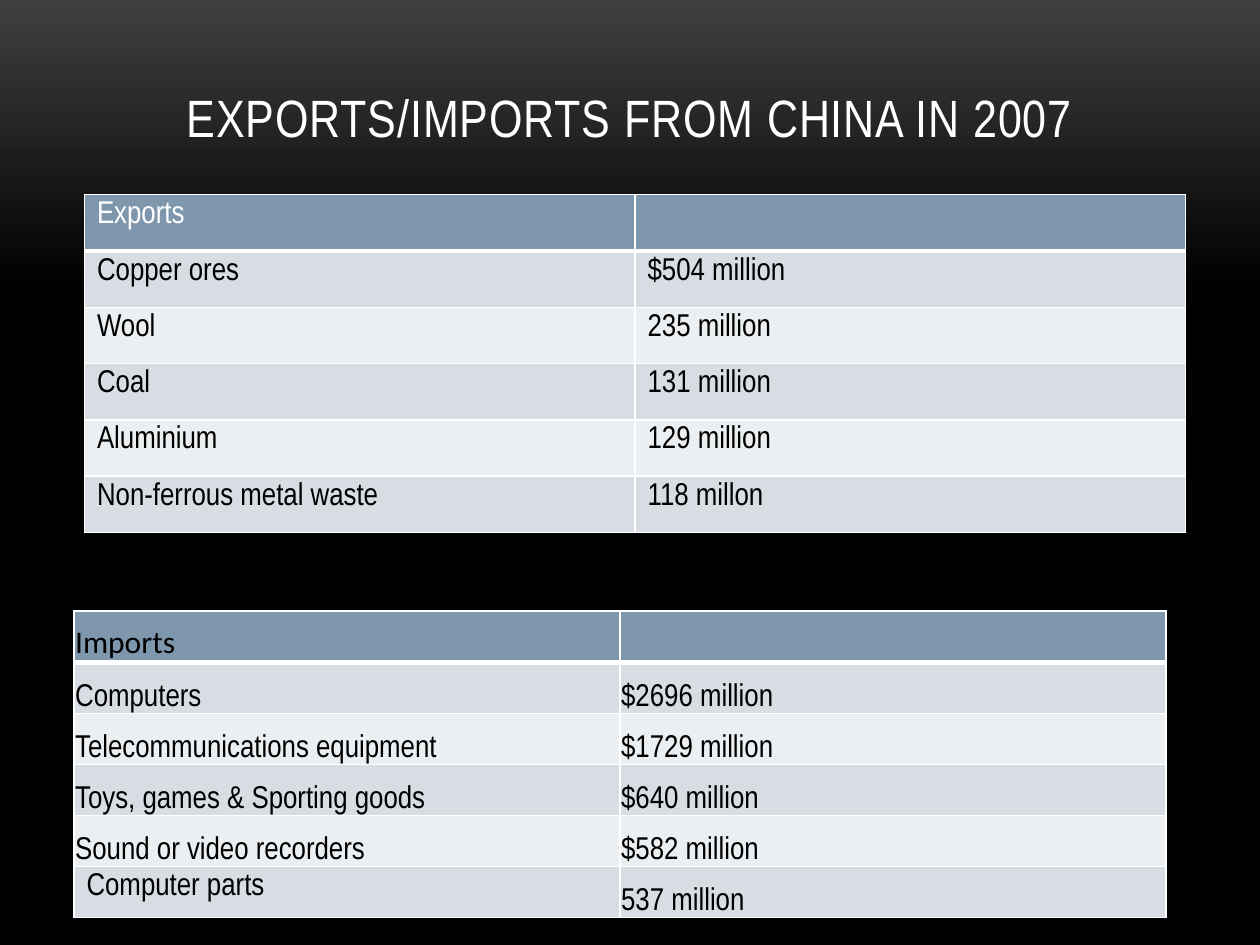
"""Build a slide with two tables of trade with China in 2007."""
from dataclasses import dataclass

from lxml.etree import SubElement as Sub
from pptx import Presentation
from pptx.dml.color import RGBColor as Rgb
from pptx.enum.text import MSO_ANCHOR as Anchor, PP_ALIGN as Align
from pptx.oxml.ns import qn
from pptx.slide import Slide
from pptx.table import _Cell as Cell
from pptx.text.text import TextFrame as Frame
from pptx.util import Pt


@dataclass(frozen=True)
class Theme:
    """Colours, fonts and type sizes."""
    glow: str = "3F3F3F"
    dark: str = "000000"
    light: str = "FFFFFF"
    head: str = "7E97AD"
    bands: tuple[str, str] = ("D8DDE3", "ECEFF1")
    face: str = "Arial Narrow"
    alt: str = "Calibri"
    title: float = 30
    body: float = 18
    thin: float = 1
    thick: float = 3


@dataclass(frozen=True)
class Trade:
    """One table of goods and values."""
    left: float
    top: float
    width: float
    row: float
    name: str
    face: str
    ink: str
    goods: tuple[tuple[str, str], ...]
    tight: bool = False


THEME = Theme()
TRADES = (
    Trade(42.24, 349.2, 624, 29.2, "Imports", THEME.alt, THEME.dark, (
        ("Computers", "$2696 million"),
        ("Telecommunications equipment", "$1729 million"),
        ("Toys, games & Sporting goods", "$640 million"),
        ("Sound or video recorders", "$582 million"),
        ("Computer parts", "537 million"),
    ), True),
    Trade(48.24, 111.3, 629.2, 32.16, "Exports", THEME.face, THEME.light, (
        ("Copper ores", "$504 million"),
        ("Wool", "235 million"),
        ("Coal", "131 million"),
        ("Aluminium", "129 million"),
        ("Non-ferrous metal waste", "118 millon"),
    )),
)


def write(frame: Frame, text: str, face: str, size: float, ink: str) -> None:
    """Set the text of a frame and format its runs."""
    frame.text = text
    for run in frame.paragraphs[0].runs:
        font = run.font
        font.name, font.size, font.bold = face, Pt(size), False
        font.color.rgb = Rgb.from_string(ink)


def edge(cell: Cell, base: float) -> None:
    """Draw the four borders of a cell."""
    props = cell._tc.get_or_add_tcPr()
    for side in "LRTB":
        wide = base if side == "B" else THEME.thin
        line = Sub(props, qn(f"a:ln{side}"), w=str(Pt(wide)))
        Sub(Sub(line, qn("a:solidFill")), qn("a:srgbClr"), val=THEME.light)


def pack(cell: Cell) -> None:
    """Seat the text of a cell at its foot with slim margins."""
    cell.vertical_anchor = Anchor.BOTTOM
    cell.margin_left = cell.margin_right = cell.margin_top = Pt(0.72)
    cell.margin_bottom = Pt(0)


def draw_trade(slide: Slide, trade: Trade) -> None:
    """Draw one trade table."""
    rows = ((trade.name, ""), *trade.goods)
    count = len(rows)
    table = slide.shapes.add_table(
        count, 2, Pt(trade.left), Pt(trade.top),
        Pt(trade.width), Pt(trade.row * count)).table
    table.first_row = table.horz_banding = False
    for col in table.columns:
        col.width = Pt(trade.width / 2)
    for r, texts in enumerate(rows):
        table.rows[r].height = Pt(trade.row)
        fill = THEME.bands[(r - 1) % 2] if r else THEME.head
        face, ink = (THEME.face, THEME.dark) if r else (trade.face, trade.ink)
        for c, text in enumerate(texts):
            cell = table.cell(r, c)
            edge(cell, THEME.thin if r else THEME.thick)
            cell.fill.solid()
            cell.fill.fore_color.rgb = Rgb.from_string(fill)
            if trade.tight and (r, c) != (count - 1, 0):
                pack(cell)
            write(cell.text_frame, text, face, THEME.body, ink)


def draw_title(slide: Slide, text: str) -> None:
    """Draw the slide title."""
    box = slide.shapes.add_textbox(Pt(48), Pt(21.6), Pt(624), Pt(90))
    frame = box.text_frame
    frame.word_wrap = True
    frame.vertical_anchor = Anchor.MIDDLE
    write(frame, text, THEME.face, THEME.title, THEME.light)
    line = frame.paragraphs[0]
    line.alignment = Align.CENTER
    line.runs[0].font._element.set("spc", "50")


def paint(slide: Slide) -> None:
    """Fade the background from grey to black."""
    fill = slide.background.fill
    fill.gradient()
    fill.gradient_angle = 270
    stops = ((0, THEME.glow), (0.31, THEME.dark))
    for stop, (place, tone) in zip(fill.gradient_stops, stops):
        stop.position = place
        stop.color.rgb = Rgb.from_string(tone)


def main() -> None:
    """Build and save the slide."""
    deck = Presentation()
    deck.slide_width, deck.slide_height = Pt(720), Pt(540)
    slide = deck.slides.add_slide(deck.slide_layouts[6])
    paint(slide)
    draw_title(slide, "EXPORTS/IMPORTS FROM CHINA IN 2007")
    for trade in TRADES:
        draw_trade(slide, trade)
    deck.save("out.pptx")


if __name__ == "__main__":
    main()
